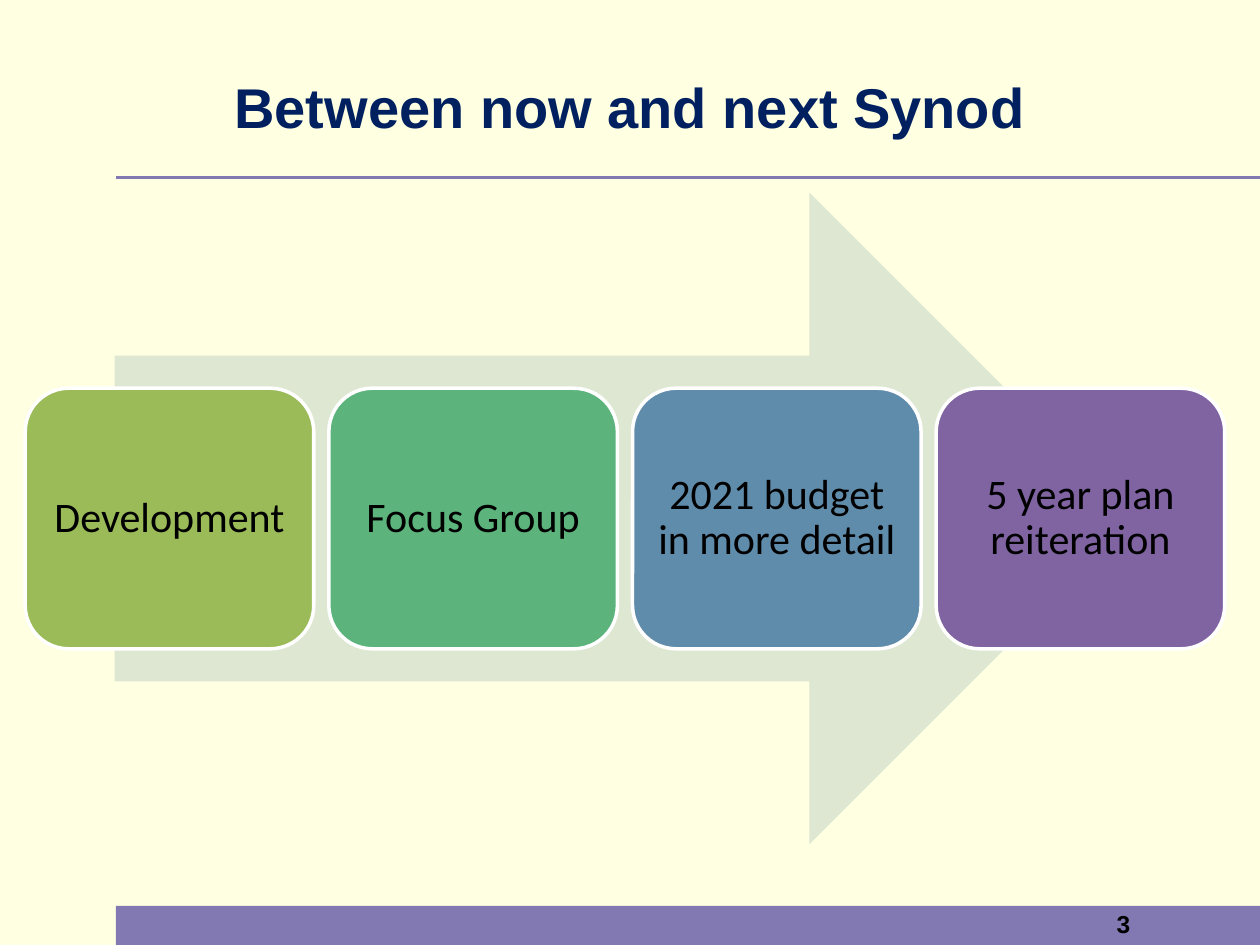
from dataclasses import dataclass

from lxml.etree import SubElement
from pptx import Presentation
from pptx.dml.color import RGBColor
from pptx.enum.shapes import MSO_CONNECTOR, MSO_SHAPE
from pptx.enum.text import MSO_ANCHOR, PP_ALIGN
from pptx.oxml.ns import qn
from pptx.util import Inches, Pt

# Content
TITLE = "Between now and next Synod"
PAGE_NUMBER = "3"
STEPS = [
    ("Development", "9BBB59"),
    ("Focus Group", "5CB37C"),
    ("2021 budget in more detail", "608CAB"),
    ("5 year plan reiteration", "8064A2"),
]


@dataclass(frozen=True)
class Theme:
    background: str = "FFFFE1"
    accent: str = "8379B2"
    arrow: str = "DEE7D1"
    outline: str = "FFFFFF"
    title: str = "002060"
    text: str = "000000"
    heading_font: str = "Arial"
    body_font: str = "Calibri"
    title_size: int = 32
    step_size: int = 24
    number_size: int = 14
    line_width: int = 2


THEME = Theme()

# Layout in inches
SLIDE_WIDTH, SLIDE_HEIGHT = 10, 7.5
MARGIN = 0.92
RULE_TOP = 1.41
BAR_TOP, BAR_HEIGHT = 7.19, 0.32
TITLE_BOX = (0.94, 0.22, 8.12, 1.25)
ARROW_BOX = (0.91, 1.53, 8.1, 5.17)
STEP_LEFT, STEP_WIDTH, STEP_GAP = 0.2, 2.29, 0.12
STEP_HEIGHT = ARROW_BOX[3] * 0.4
STEP_TOP = ARROW_BOX[1] + (ARROW_BOX[3] - STEP_HEIGHT) / 2


def color(value):
    return RGBColor.from_string(value)


def add_filled_shape(slide, kind, box, fill, outline=None):
    shape = slide.shapes.add_shape(kind, *map(Inches, box))
    shape.shadow.inherit = False
    shape.fill.solid()
    shape.fill.fore_color.rgb = color(fill)
    if outline:
        shape.line.color.rgb = color(outline)
        shape.line.width = Pt(THEME.line_width)
    else:
        shape.line.fill.background()
    return shape


def write_text(shape, text, font, size, text_color, bold=False,
               alignment=PP_ALIGN.CENTER, spacing=1.0, margins=(0.1, 0.05, 0.1, 0.05)):
    frame = shape.text_frame
    frame.text = text
    frame.word_wrap = True
    frame.vertical_anchor = MSO_ANCHOR.MIDDLE
    for side, margin in zip(("left", "top", "right", "bottom"), margins):
        setattr(frame, f"margin_{side}", Inches(margin))
    paragraph = frame.paragraphs[0]
    paragraph.alignment = alignment
    paragraph.line_spacing = spacing
    run_font = paragraph.runs[0].font
    for name, value in {"name": font, "size": Pt(size), "bold": bold}.items():
        setattr(run_font, name, value)
    run_font.color.rgb = color(text_color)


def build():
    presentation = Presentation()
    presentation.slide_width = Inches(SLIDE_WIDTH)
    presentation.slide_height = Inches(SLIDE_HEIGHT)
    slide = presentation.slides.add_slide(presentation.slide_layouts[5])
    slide.background.fill.solid()
    slide.background.fill.fore_color.rgb = color(THEME.background)

    # Footer bar with page number
    bar = add_filled_shape(slide, MSO_SHAPE.RECTANGLE,
                           (MARGIN, BAR_TOP, SLIDE_WIDTH - MARGIN, BAR_HEIGHT), THEME.accent)
    write_text(bar, PAGE_NUMBER, THEME.heading_font, THEME.number_size, THEME.text,
               bold=True, alignment=PP_ALIGN.RIGHT, spacing=0.8, margins=(0.1, 0, 1.03, 0))

    # Rule under the title
    rule = slide.shapes.add_connector(MSO_CONNECTOR.STRAIGHT, Inches(MARGIN), Inches(RULE_TOP),
                                      Inches(SLIDE_WIDTH), Inches(RULE_TOP))
    rule.line.color.rgb = color(THEME.accent)
    rule.line.width = Pt(THEME.line_width)
    SubElement(rule._element.spPr, qn("a:effectLst"))

    # Title
    title = slide.shapes.title
    for name, value in zip(("left", "top", "width", "height"), TITLE_BOX):
        setattr(title, name, Inches(value))
    write_text(title, TITLE, THEME.heading_font, THEME.title_size, THEME.title, bold=True)

    # Process arrow and its steps
    add_filled_shape(slide, MSO_SHAPE.RIGHT_ARROW, ARROW_BOX, THEME.arrow)
    for index, (label, fill) in enumerate(STEPS):
        left = STEP_LEFT + index * (STEP_WIDTH + STEP_GAP)
        step = add_filled_shape(slide, MSO_SHAPE.ROUNDED_RECTANGLE,
                                (left, STEP_TOP, STEP_WIDTH, STEP_HEIGHT), fill, THEME.outline)
        write_text(step, label, THEME.body_font, THEME.step_size, THEME.text,
                   spacing=0.9, margins=(0.1,) * 4)

    presentation.save("out.pptx")


if __name__ == "__main__":
    build()
